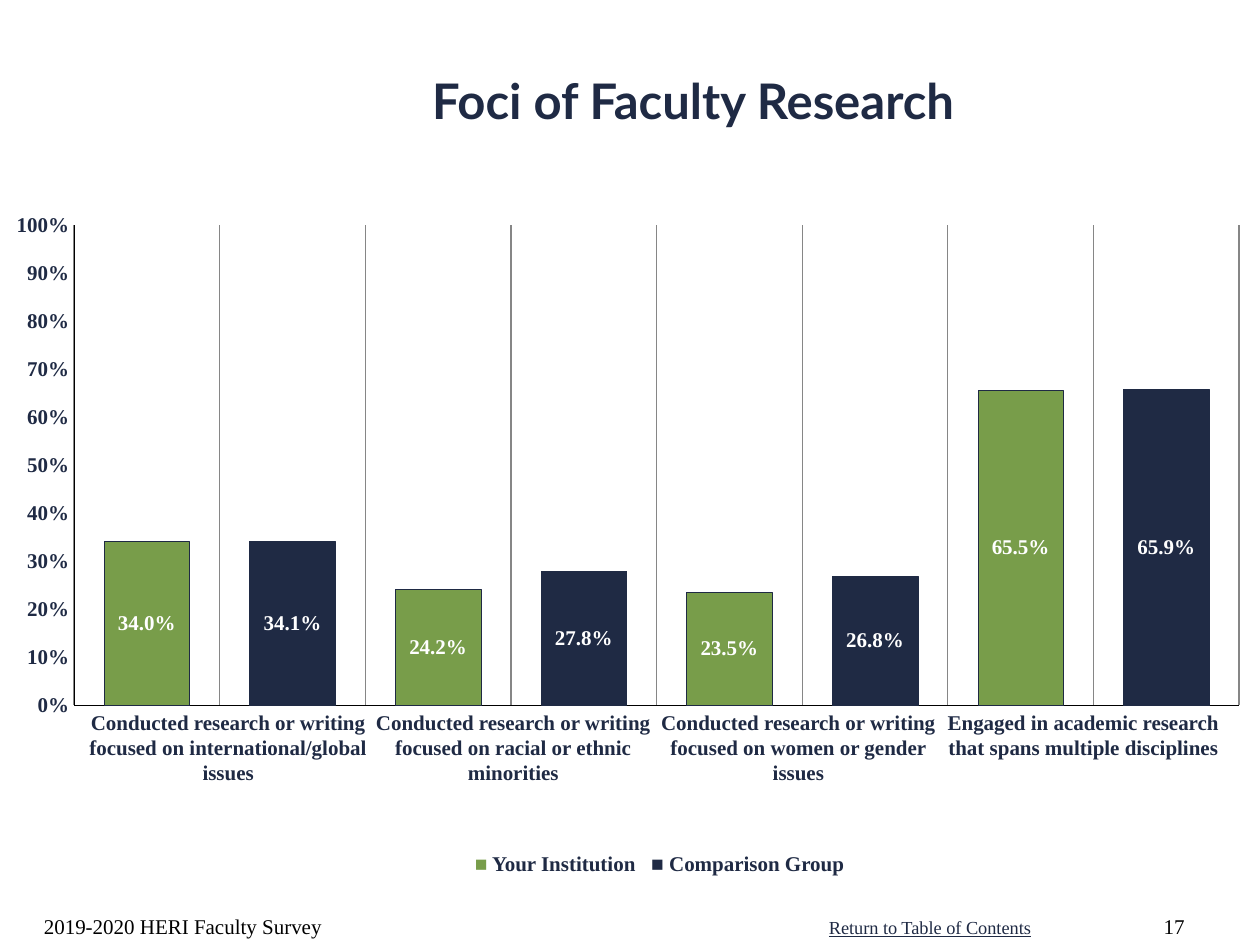
from dataclasses import dataclass

from lxml.etree import SubElement
from pptx import Presentation
from pptx.chart.data import CategoryChartData
from pptx.dml.color import RGBColor
from pptx.enum.chart import (XL_CHART_TYPE, XL_LABEL_POSITION, XL_TICK_LABEL_POSITION,
                             XL_TICK_MARK)
from pptx.enum.text import MSO_ANCHOR, PP_ALIGN
from pptx.oxml import parse_xml
from pptx.oxml.ns import nsdecls, qn
from pptx.util import Inches, Pt


@dataclass(frozen=True)
class Theme:
    navy: str = "1F2A44"
    green: str = "789D4A"
    black: str = "000000"
    white: str = "FFFFFF"
    grid: str = "868686"
    head: str = "Lato"
    body: str = "Times New Roman"
    title: float = 28
    text: float = 12
    link: float = 10.5


THEME = Theme()
LABELS = (
    "Conducted research or writing focused on international/global issues",
    "Conducted research or writing focused on racial or ethnic minorities",
    "Conducted research or writing focused on women or gender issues",
    "Engaged in academic research that spans multiple disciplines",
)
RATES = (0.34, 0.341, 0.242, 0.278, 0.235, 0.268, 0.655, 0.659)


def style(font, color=THEME.navy, size=THEME.text, name=THEME.body,
          bold=False, under=False):
    font.name, font.size = name, Pt(size)
    font.bold, font.underline = bold, under
    font.color.rgb = RGBColor.from_string(color)


def write(frame, runs, align=PP_ALIGN.LEFT, anchor=MSO_ANCHOR.TOP,
          wrap=True, tab=None, **look):
    """Write one paragraph from (text, colour) runs."""
    frame.word_wrap, frame.vertical_anchor = wrap, anchor
    para = frame.paragraphs[0]
    para.alignment = align
    if tab:
        stops = SubElement(para._p.get_or_add_pPr(), qn("a:tabLst"))
        SubElement(stops, qn("a:tab"), pos=str(Inches(tab)), algn="l")
    for text, color in runs:
        run = para.add_run()
        run.text = text
        style(run.font, color=color, **look)


def stroke(line, color, width):
    line.color.rgb = RGBColor.from_string(color)
    line.width = Pt(width)


class Deck:
    def __init__(self, theme):
        self.theme = theme
        self.prs = Presentation()
        self.prs.slide_width, self.prs.slide_height = Inches(10), Inches(7.5)
        self.slide = self.prs.slides.add_slide(self.prs.slide_layouts[5])

    def title(self, text, box):
        shape = self.slide.shapes.title
        shape.left, shape.top, shape.width, shape.height = map(Inches, box)
        shape.text_frame.margin_bottom = Inches(0.3)
        write(shape.text_frame, [(text, self.theme.navy)], align=PP_ALIGN.CENTER,
              anchor=MSO_ANCHOR.MIDDLE, size=self.theme.title,
              name=self.theme.head, bold=True)

    def text(self, runs, box, inset=0.1, **look):
        frame = self.slide.shapes.add_textbox(*map(Inches, box)).text_frame
        frame.margin_left = frame.margin_right = Inches(inset)
        write(frame, runs, **look)

    def chart(self, rates, box):
        data = CategoryChartData(number_format="0.0%")
        data.categories = [str(i + 1) for i in range(len(rates))]
        data.add_series("Series 1", rates)
        chart = self.slide.shapes.add_chart(
            XL_CHART_TYPE.COLUMN_STACKED, *map(Inches, box), data).chart
        chart.has_legend = chart.has_title = False
        style(chart.font, bold=True)
        self.axes(chart)
        self.bars(chart.plots[0])
        self.layout(chart, x=0.055, y=0.029, w=0.946, h=0.933)

    def axes(self, chart):
        cat, val = chart.category_axis, chart.value_axis
        for axis in (cat, val):
            axis.major_tick_mark = axis.minor_tick_mark = XL_TICK_MARK.NONE
            stroke(axis.format.line, self.theme.black, 0.19)
        cat.tick_label_position = XL_TICK_LABEL_POSITION.NONE
        cat.has_major_gridlines = True
        stroke(cat.major_gridlines.format.line, self.theme.grid, 0.75)
        val.has_major_gridlines = False
        val.minimum_scale, val.maximum_scale, val.major_unit = 0, 1, 0.1
        val.tick_labels.number_format = "0%"
        val.tick_labels.number_format_is_linked = False

    def bars(self, plot):
        plot.gap_width, plot.overlap, plot.vary_by_categories = 70, 100, False
        series = plot.series[0]
        # Green and navy bars alternate within each question
        for i in range(len(series.values)):
            form = series.points[i].format
            form.fill.solid()
            form.fill.fore_color.rgb = RGBColor.from_string(
                self.theme.navy if i % 2 else self.theme.green)
            stroke(form.line, self.theme.navy, 0.25)
        labels = series.data_labels
        labels.show_value = True
        labels.number_format, labels.number_format_is_linked = "0.0%", False
        labels.position = XL_LABEL_POSITION.CENTER
        style(labels.font, color=self.theme.white, bold=True)

    def layout(self, chart, **spot):
        area = chart._chartSpace.chart.plotArea
        for old in area.findall(qn("c:layout")):
            area.remove(old)
        sizes = "".join(f'<c:{key} val="{val}"/>' for key, val in spot.items())
        area.insert(0, parse_xml(
            f'<c:layout {nsdecls("c")}><c:manualLayout><c:layoutTarget val="inner"/>'
            f'<c:xMode val="edge"/><c:yMode val="edge"/>{sizes}'
            '</c:manualLayout></c:layout>'))


def main():
    deck = Deck(THEME)
    deck.title("Foci of Faculty Research", (1, 0.17, 9, 1.5))
    deck.chart(RATES, (0.06, 1.67, 9.78, 4.08))

    # Question labels in four equal columns
    left, width = 0.68, 9.05 / len(LABELS)
    for i, label in enumerate(LABELS):
        deck.text([(label, THEME.navy)], (left + i * width, 5.58, width, 0.91),
                  inset=0, align=PP_ALIGN.CENTER, bold=True)

    # Legend
    deck.text([("■", THEME.green), (" Your Institution\t■ Comparison Group", THEME.navy)],
              (3.67, 6.7, 3.42, 0.3), tab=1.4, bold=True)

    # Footer
    deck.text([("2019-2020 HERI Faculty Survey", THEME.black)],
              (0.25, 7, 3.17, 0.5), anchor=MSO_ANCHOR.BOTTOM)
    deck.text([("Return to Table of Contents", THEME.navy)], (6.48, 7.22, 1.82, 0.28),
              wrap=False, size=THEME.link, under=True)
    deck.text([("17", THEME.black)], (9, 7, 0.5, 0.5),
              align=PP_ALIGN.RIGHT, anchor=MSO_ANCHOR.BOTTOM)
    deck.prs.save("out.pptx")


if __name__ == "__main__":
    main()
